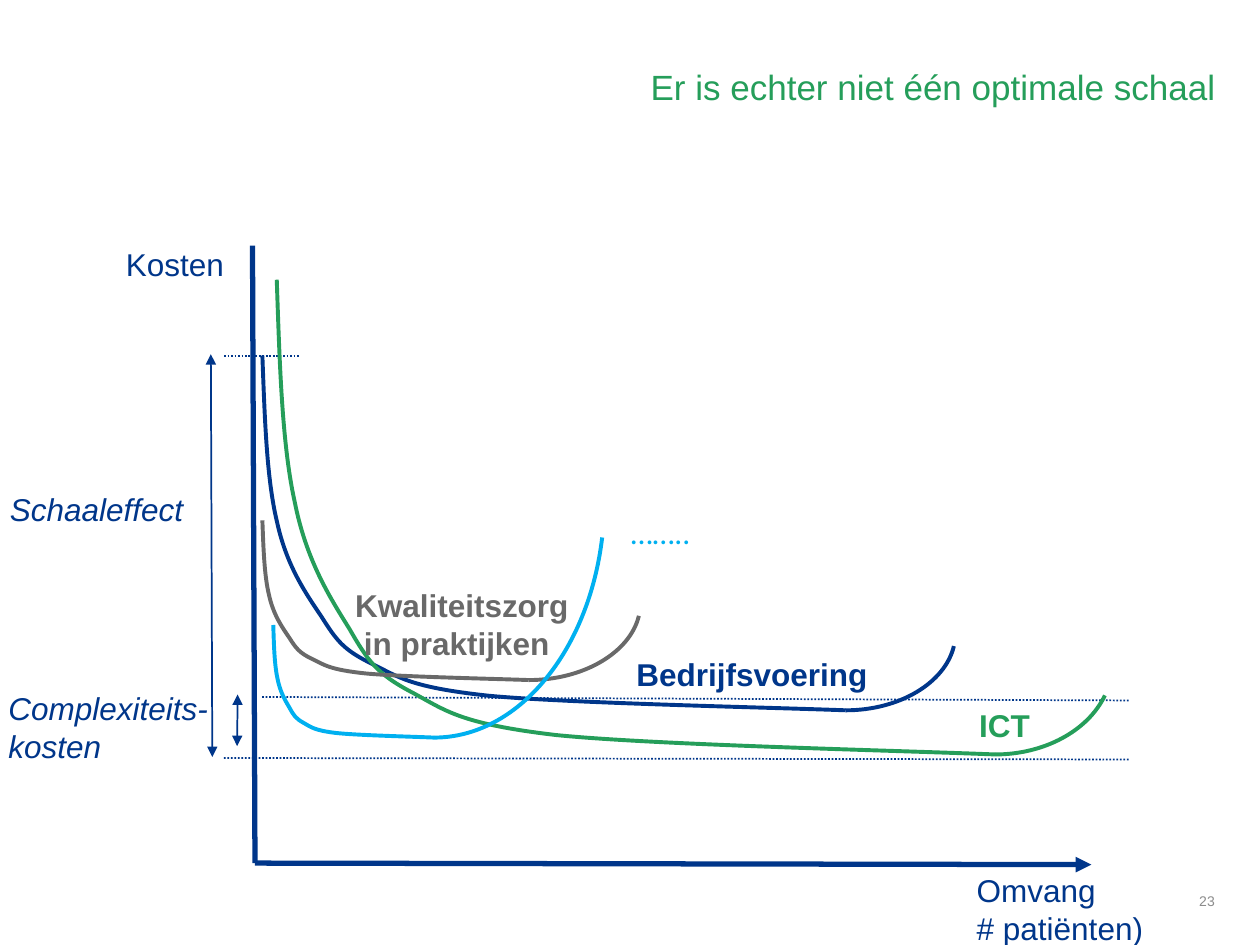
"""Build a slide with cost curves per activity against organisation size."""
from lxml.etree import SubElement
from pptx import Presentation
from pptx.dml.color import RGBColor
from pptx.enum.dml import MSO_LINE
from pptx.enum.shapes import MSO_CONNECTOR
from pptx.enum.text import MSO_ANCHOR, PP_ALIGN
from pptx.oxml.ns import qn
from pptx.util import Cm, Pt

COLORS = {"navy": "00368A", "green": "259E5A", "gray": "696969",
          "cyan": "00B0F0", "pale": "8C8C8C"}

TEXTS = [
    ("Er is echter niet één optimale schaal", (8.66, 1.3, 16.1, 3.4),
     dict(size=20, color="green", align=PP_ALIGN.RIGHT, spacing=0.9)),
    ("23", (17.93, 17.65, 6.81, 1.02),
     dict(size=8, color="pale", align=PP_ALIGN.RIGHT, anchor=MSO_ANCHOR.MIDDLE)),
    ("Bedrijfsvoering", (12.58, 13.08, 5.21, 1.02), dict(bold=True, wrap=False)),
    ("ICT", (19.49, 14.11, 1.85, 1.02), dict(color="green", bold=True)),
    ("Kosten", (2.29, 4.81, 2.51, 1.8), dict(wrap=False)),
    ("Omvang\n# patiënten)", (19.44, 17.44, 3.89, 1.8), dict(wrap=False)),
    ("Schaaleffect", (-0.05, 9.75, 6.55, 1.02), dict(italic=True)),
    ("Kwaliteitszorg\n in praktijken", (6.91, 11.69, 4.85, 1.8),
     dict(color="gray", bold=True, wrap=False)),
    ("Complexiteits-\nkosten", (-0.08, 13.77, 6.55, 1.8), dict(italic=True)),
    ("……..", (12.47, 10.21, 1.73, 1.02),
     dict(color="cyan", font="Calibri", wrap=False)),
]

LINES = [
    ((5.09, 4.95), (5.14, 17.4), dict(width=3)),
    ((5.14, 17.4), (22, 17.43), dict(width=3, ends=["tailEnd"])),
    ((22.75, 15.31), (4.5, 15.28), dict(dotted=True)),
    ((4.52, 7.17), (6.02, 7.17), dict(dotted=True)),
    ((22.75, 14.12), (5.28, 14.05), dict(dotted=True)),
    ((4.28, 15.26), (4.25, 7.14), dict(ends=["headEnd", "tailEnd"])),
    ((4.78, 15.04), (4.79, 14), dict(ends=["headEnd", "tailEnd"])),
]

UNIT = 1000
FALL = [(0, 0), (4, 172), (7, 345), (25, 468), (41, 590), (73, 667),
        (101, 735), (127, 803), (139, 830), (188, 869), (235, 907),
        (253, 935), (388, 959), (523, 980), (872, 992), (1000, 1000)]
RISE = [(0, 1000), (500, 1000), (920, 640), (1000, 165)]
LOW_RISE = [(0, 1000), (445, 1000), (840, 740), (993, 350)]

CURVES = [
    ("navy", (5.29, 7.17), (11.76, 7.15), (2.18, 1.55), RISE),
    ("green", (5.58, 5.64), (14.48, 9.57), (2.23, 1.83), LOW_RISE),
    ("gray", (5.29, 10.49), (5.37, 3.22), (2.22, 1.55), RISE),
    ("cyan", (5.51, 12.6), (3.24, 2.27), (3.39, 4.83), RISE),
]


def rgb(name):
    return RGBColor.from_string(COLORS[name])


def add_text(slide, text, box, size=18, color="navy", font="Arial", bold=False,
             italic=False, align=PP_ALIGN.LEFT, anchor=MSO_ANCHOR.TOP,
             spacing=None, wrap=True):
    tf = slide.shapes.add_textbox(*map(Cm, box)).text_frame
    tf.word_wrap = wrap
    tf.vertical_anchor = anchor
    for i, line in enumerate(text.split("\n")):
        p = tf.add_paragraph() if i else tf.paragraphs[0]
        p.alignment = align
        p.line_spacing = spacing
        r = p.add_run()
        r.text = line
        r.font.size, r.font.name = Pt(size), font
        r.font.bold, r.font.italic = bold, italic
        r.font.color.rgb = rgb(color)


def add_line(slide, start, end, width=1, dotted=False, ends=()):
    c = slide.shapes.add_connector(MSO_CONNECTOR.STRAIGHT, *map(Cm, start + end))
    c.line.color.rgb = rgb("navy")
    c.line.width = Pt(width)
    if dotted:
        c.line.dash_style = MSO_LINE.ROUND_DOT
    for tag in ends:
        SubElement(c.line._get_or_add_ln(), qn(f"a:{tag}"), type="triangle")
    SubElement(c._element.spPr, qn("a:effectLst"))


def add_curve(slide, knots, left, top, width, height, color):
    fb = slide.shapes.build_freeform(Cm(left), Cm(top))
    fb.add_line_segments([(Cm(left + width), Cm(top + height))], close=False)
    sp = fb.convert_to_shape()
    outline = next(sp._element.iter(qn("a:path")))
    for child in list(outline):
        outline.remove(child)
    outline.set("w", str(UNIT))
    outline.set("h", str(UNIT))
    for i, (x, y) in enumerate(knots):
        if i % 3 == 1 or i == 0:
            step = SubElement(outline, qn("a:cubicBezTo" if i else "a:moveTo"))
        SubElement(step, qn("a:pt"), x=str(x), y=str(y))
    sp.shadow.inherit = False
    sp.fill.background()
    sp.line.color.rgb = rgb(color)
    sp.line.width = Pt(2.25)


def main():
    prs = Presentation()
    prs.slide_width, prs.slide_height = Cm(25.4), Cm(19.05)
    slide = prs.slides.add_slide(prs.slide_layouts[6])
    for start, end, style in LINES:
        add_line(slide, start, end, **style)
    for color, (x, y), (w, h), (rise_w, rise_h), rise in CURVES:
        add_curve(slide, FALL, x, y, w, h, color)
        add_curve(slide, rise, x + w, y + h - rise_h, rise_w, rise_h, color)
    for text, box, style in TEXTS:
        add_text(slide, text, box, **style)
    prs.save("out.pptx")


if __name__ == "__main__":
    main()
